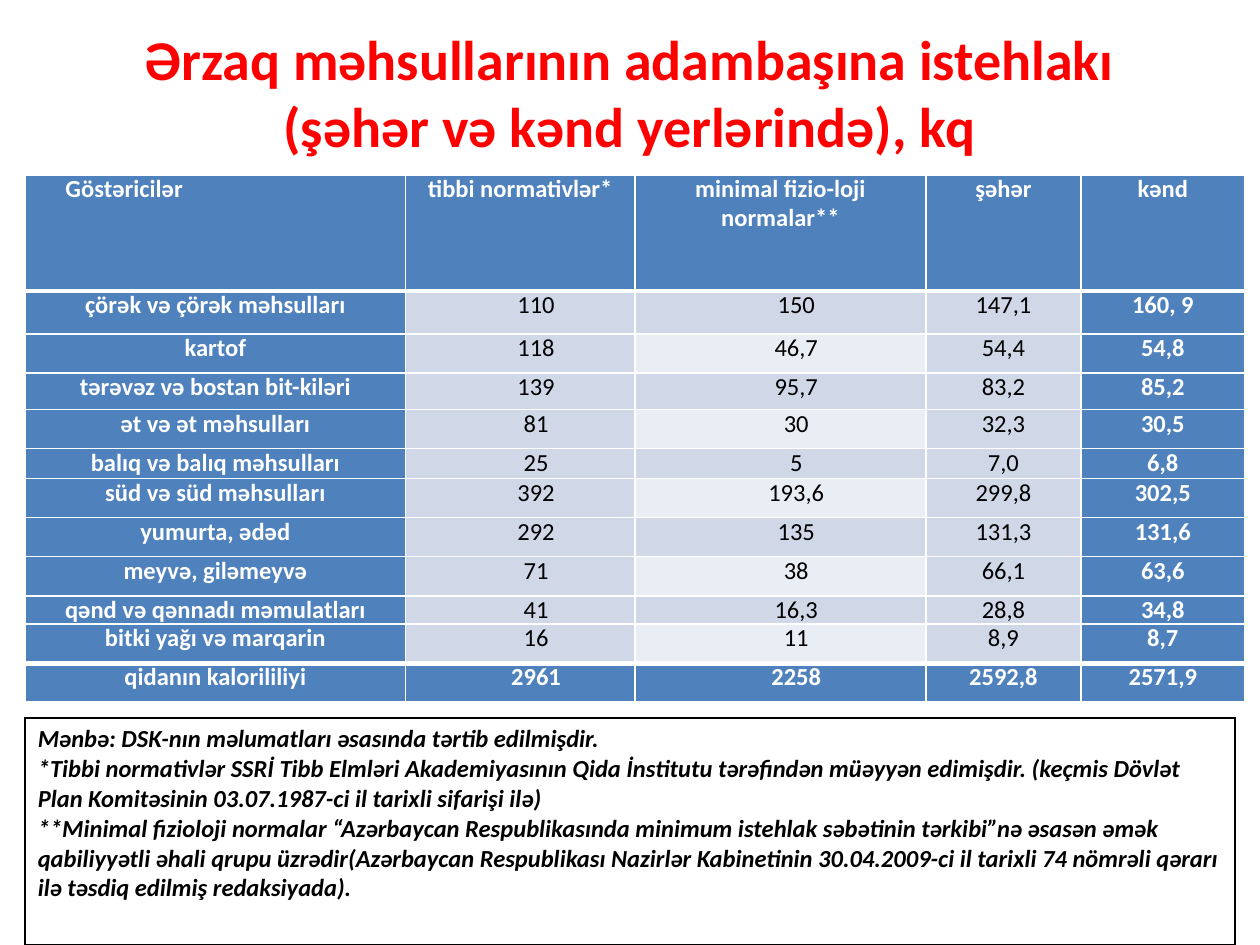
"""Build a slide with a table of food consumption per person and its source notes."""
import lxml.etree
import pptx
import pptx.dml.color
import pptx.enum.text
import pptx.oxml.ns
import pptx.util

Inches = pptx.util.Inches
Pt = pptx.util.Pt
RGB = pptx.dml.color.RGBColor.from_string
ALIGN = pptx.enum.text.PP_ALIGN

TITLE = "Ərzaq məhsullarının adambaşına istehlakı (şəhər və kənd yerlərində), kq"
ROWS = [
    ("Göstəricilər", "tibbi normativlər*", "minimal fizio-loji normalar**", "şəhər", "kənd"),
    ("çörək və çörək məhsulları", "110", "150", "147,1", "160, 9"),
    ("kartof", "118", "46,7", "54,4", "54,8"),
    ("tərəvəz və bostan bit-kiləri", "139", "95,7", "83,2", "85,2"),
    ("ət və ət məhsulları", "81", "30", "32,3", "30,5"),
    ("balıq və balıq məhsulları", "25", "5", "7,0", "6,8"),
    ("süd və süd məhsulları", "392", "193,6", "299,8", "302,5"),
    ("yumurta, ədəd", "292", "135", "131,3", "131,6"),
    ("meyvə, giləmeyvə", "71", "38", "66,1", "63,6"),
    ("qənd və qənnadı məmulatları", "41", "16,3", "28,8", "34,8"),
    ("bitki yağı və marqarin", "16", "11", "8,9", "8,7"),
    ("qidanın kalorililiyi", "2961", "2258", "2592,8", "2571,9"),
]
NOTES = [
    "Mənbə: DSK-nın məlumatları əsasında tərtib edilmişdir.",
    "*Tibbi normativlər SSRİ Tibb Elmləri Akademiyasının Qida İnstitutu tərəfindən müəyyən "
    "edimişdir. (keçmis Dövlət Plan Komitəsinin 03.07.1987-ci il tarixli sifarişi ilə)",
    "**Minimal fizioloji normalar “Azərbaycan Respublikasında minimum istehlak səbətinin "
    "tərkibi”nə əsasən əmək qabiliyyətli əhali qrupu üzrədir(Azərbaycan Respublikası Nazirlər "
    "Kabinetinin 30.04.2009-ci il tarixli 74 nömrəli qərarı ilə təsdiq edilmiş redaksiyada).",
]
COL_WIDTHS = [3.02, 1.82, 2.31, 1.23, 1.3]
ROW_HEIGHTS = [0.92, 0.34, 0.31, 0.29, 0.31, 0.24, 0.31, 0.31, 0.31, 0.18, 0.31, 0.31]
INDENTS = [0, 0.25, 0.25, -0.03, 0]
THEME = {
    "font": "Calibri", "title_size": 32, "text_size": 14,
    "title": "FF0000", "dark": "000000", "light": "FFFFFF",
    "accent": "4F81BD", "band": "D0D8E8", "pale_band": "E9EDF4",
    "thin": 1, "thick": 3,
}


def style_runs(p, size, color, bold=True, italic=False):
    for r in p.runs:
        r.font.name = THEME["font"]
        r.font.size = Pt(size)
        r.font.bold = bold
        r.font.italic = italic
        r.font.color.rgb = RGB(color)


def set_borders(cell, color, top=THEME["thin"], bottom=THEME["thin"]):
    qn = pptx.oxml.ns.qn
    tc_pr = cell._tc.get_or_add_tcPr()
    widths = {"lnL": THEME["thin"], "lnR": THEME["thin"], "lnT": top, "lnB": bottom}
    for i, (side, width) in enumerate(widths.items()):
        ln = lxml.etree.Element(qn(f"a:{side}"), w=str(Pt(width)))
        fill = lxml.etree.SubElement(ln, qn("a:solidFill"))
        lxml.etree.SubElement(fill, qn("a:srgbClr"), val=color)
        tc_pr.insert(i, ln)


def add_table(s, left, top, widths, heights):
    frame = s.shapes.add_table(len(heights), len(widths), Inches(left), Inches(top),
                               Inches(sum(widths)), Inches(sum(heights)))
    table = frame.table
    table.first_row = table.horz_banding = False
    for col, width in zip(table.columns, widths):
        col.width = Inches(width)
    for row, height in zip(table.rows, heights):
        row.height = Inches(height)
    return table


def fill_food_cell(cell, text, i, j):
    last = len(ROWS) - 1
    header = i == 0
    strong = i in (0, last) or j in (0, len(COL_WIDTHS) - 1)
    pale = j == 2 and i % 2 == 0
    fill = "accent" if strong else "pale_band" if pale else "band"
    cell.fill.solid()
    cell.fill.fore_color.rgb = RGB(THEME[fill])
    cell.margin_left = cell.margin_right = Inches(0.07)
    cell.margin_top = cell.margin_bottom = 0
    p = cell.text_frame.paragraphs[0]
    p.text = text
    p.line_spacing = 0.95
    p.alignment = ALIGN.JUSTIFY if header and j == 0 else ALIGN.CENTER
    indent = (0.25 if j == 0 else 0) if header else INDENTS[j]
    p._p.get_or_add_pPr().set("indent", str(Inches(indent)))
    style_runs(p, THEME["text_size"], THEME["light" if strong else "dark"], strong)
    set_borders(cell, THEME["light"],
                top=THEME["thick" if i in (1, last) else "thin"],
                bottom=THEME["thick" if i in (0, last - 1) else "thin"])


def add_title(s):
    sp = s.shapes.title
    sp.left, sp.top, sp.width, sp.height = (Inches(v) for v in (0.5, 0, 9, 1.55))
    tf = sp.text_frame
    tf.text = TITLE
    tf.vertical_anchor = pptx.enum.text.MSO_ANCHOR.MIDDLE
    tf.margin_bottom = Inches(0.14)
    p = tf.paragraphs[0]
    p.alignment = ALIGN.CENTER
    style_runs(p, THEME["title_size"], THEME["title"])


def add_notes_table(s):
    cell = add_table(s, 0.2, 5.7, [9.6], [1.8]).cell(0, 0)
    cell.fill.background()
    tf = cell.text_frame
    tf.text = "\n".join(NOTES)
    for p in tf.paragraphs:
        style_runs(p, THEME["text_size"], THEME["dark"], italic=True)
    set_borders(cell, THEME["dark"])


def main():
    prs = pptx.Presentation()
    prs.slide_width, prs.slide_height = Inches(10), Inches(7.5)
    s = prs.slides.add_slide(prs.slide_layouts[5])
    add_title(s)
    table = add_table(s, 0.2, 1.39, COL_WIDTHS, ROW_HEIGHTS)
    for i, row in enumerate(ROWS):
        for j, text in enumerate(row):
            fill_food_cell(table.cell(i, j), text, i, j)
    add_notes_table(s)
    prs.save("out.pptx")


if __name__ == "__main__":
    main()
